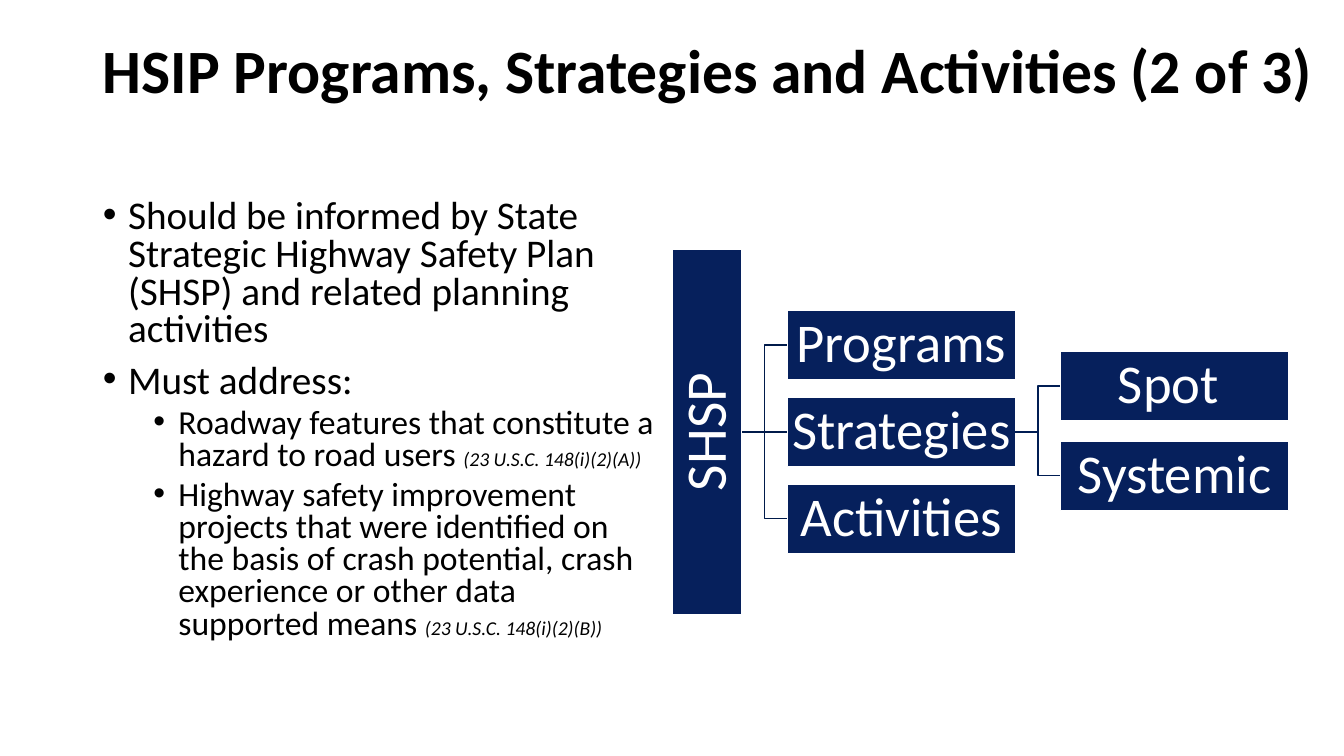
from dataclasses import dataclass

from lxml import etree
from pptx import Presentation
from pptx.dml.color import RGBColor
from pptx.enum.shapes import MSO_CONNECTOR, MSO_SHAPE
from pptx.enum.text import MSO_ANCHOR, MSO_AUTO_SIZE, PP_ALIGN
from pptx.oxml.ns import qn
from pptx.util import Inches, Pt

RECTANGLE = MSO_SHAPE.RECTANGLE
ELBOW, STRAIGHT = MSO_CONNECTOR.ELBOW, MSO_CONNECTOR.STRAIGHT
MIDDLE, TOP = MSO_ANCHOR.MIDDLE, MSO_ANCHOR.TOP
LEFT, CENTER = PP_ALIGN.LEFT, PP_ALIGN.CENTER
NO_AUTOFIT = MSO_AUTO_SIZE.NONE


@dataclass(frozen=True)
class Theme:
    font: str = "Calibri"
    ink: RGBColor = RGBColor(0, 0, 0)
    white: RGBColor = RGBColor(255, 255, 255)
    node: RGBColor = RGBColor(0x06, 0x20, 0x5C)
    trunk_line: RGBColor = RGBColor(0x00, 0x1A, 0x4A)
    branch_line: RGBColor = RGBColor(0x00, 0x1D, 0x53)
    title_size: int = 44
    bullet_size: int = 28
    sub_bullet_size: int = 24
    citation_size: int = 14
    root_size: int = 41
    node_size: int = 39


THEME = Theme()

BULLETS = [
    (0, "Should be informed by State Strategic Highway Safety Plan (SHSP) "
        "and related planning activities", ""),
    (0, "Must address:", ""),
    (1, "Roadway features that constitute a hazard to road users ",
     "(23 U.S.C. 148(i)(2)(A))"),
    (1, "Highway safety improvement projects that were identified on the basis "
        "of crash potential, crash experience or other data supported means ",
     "(23 U.S.C. 148(i)(2)(B))"),
]


def style_font(font, size, color=THEME.ink, bold=False, italic=False):
    font.name = THEME.font
    font.size = Pt(size)
    font.color.rgb = color
    font.bold = bold
    font.italic = italic


def place(shape, box):
    shape.left, shape.top, shape.width, shape.height = map(Inches, box)


def build_title(slide, box):
    title = slide.shapes.title
    place(title, box)
    frame = title.text_frame
    frame.text = "HSIP Programs, Strategies and Activities (2 of 3)"
    frame.auto_size = NO_AUTOFIT
    frame.vertical_anchor = MIDDLE
    paragraph = frame.paragraphs[0]
    paragraph.alignment = LEFT
    paragraph.line_spacing = 0.9
    style_font(paragraph.runs[0].font, THEME.title_size, bold=True)


def add_bullet(paragraph, level):
    properties = paragraph._p.get_or_add_pPr()
    properties.set("marL", str(Inches(0.25 + 0.5 * level)))
    properties.set("indent", str(Inches(-0.25)))
    etree.SubElement(properties, qn("a:buFont")).set("typeface", "Arial")
    etree.SubElement(properties, qn("a:buChar")).set("char", "•")


def build_bullets(slide, box):
    body = slide.placeholders[1]
    place(body, box)
    frame = body.text_frame
    frame.text = "\n".join(text for _, text, _ in BULLETS)
    frame.auto_size = NO_AUTOFIT
    frame.vertical_anchor = TOP
    for index, (level, _, citation) in enumerate(BULLETS):
        paragraph = frame.paragraphs[index]
        add_bullet(paragraph, level)
        paragraph.level = level
        paragraph.alignment = LEFT
        paragraph.line_spacing = 0.8
        paragraph.space_before = Pt((5 if level else 10) if index else 0)
        size = THEME.sub_bullet_size if level else THEME.bullet_size
        style_font(paragraph.runs[0].font, size)
        if citation:
            run = paragraph.add_run()
            run.text = citation
            style_font(run.font, THEME.citation_size, italic=True)


def add_node(slide, text, center_x, center_y, width, height, size, rotation=0):
    node = slide.shapes.add_shape(
        RECTANGLE, Inches(center_x - width / 2), Inches(center_y - height / 2),
        Inches(width), Inches(height))
    node.rotation = rotation
    node.shadow.inherit = False
    node.fill.solid()
    node.fill.fore_color.rgb = THEME.node
    node.line.color.rgb = THEME.white
    node.line.width = Pt(1)
    frame = node.text_frame
    frame.text = text
    frame.word_wrap = True
    frame.vertical_anchor = MIDDLE
    frame.margin_left = frame.margin_right = Inches(0.03)
    frame.margin_top = frame.margin_bottom = Inches(0.03)
    paragraph = frame.paragraphs[0]
    paragraph.alignment = CENTER
    paragraph.line_spacing = 0.9
    style_font(paragraph.runs[0].font, size, THEME.white)


def add_link(slide, start, end, color):
    kind = STRAIGHT if start[1] == end[1] else ELBOW
    link = slide.shapes.add_connector(kind, *map(Inches, start + end))
    link.line.color.rgb = color
    link.line.width = Pt(1)
    etree.SubElement(link._element.spPr, qn("a:effectLst"))


def add_branch(slide, names, start, center_y, pitch, color):
    gap, width, height = 0.45, 2.26, 0.69
    left = start[0] + gap
    for index, name in enumerate(names):
        node_y = center_y + (index - (len(names) - 1) / 2) * pitch
        add_link(slide, start, (left, node_y), color)
        add_node(slide, name, left + width / 2, node_y, width, height,
                 THEME.node_size)
    return left + width


def build_hierarchy(slide, box):
    left, top, _, height = box
    root_width = 0.69
    center_y = top + height / 2
    add_node(slide, "SHSP", left + root_width / 2, center_y,
             height, root_width, THEME.root_size, 270)
    right = add_branch(slide, ["Programs", "Strategies", "Activities"],
                       (left + root_width, center_y), center_y, 0.86,
                       THEME.trunk_line)
    add_branch(slide, ["Spot ", "Systemic"], (right, center_y),
               center_y - 0.01, 0.89, THEME.branch_line)


def main():
    presentation = Presentation()
    presentation.slide_width = Inches(13.33)
    presentation.slide_height = Inches(7.5)
    slide = presentation.slides.add_slide(presentation.slide_layouts[1])
    build_title(slide, (0.92, 0, 12.42, 1.45))
    build_bullets(slide, (0.92, 1.93, 5.67, 4.82))
    build_hierarchy(slide, (6.67, 2.47, 6.12, 3.63))
    presentation.save("out.pptx")


if __name__ == "__main__":
    main()
